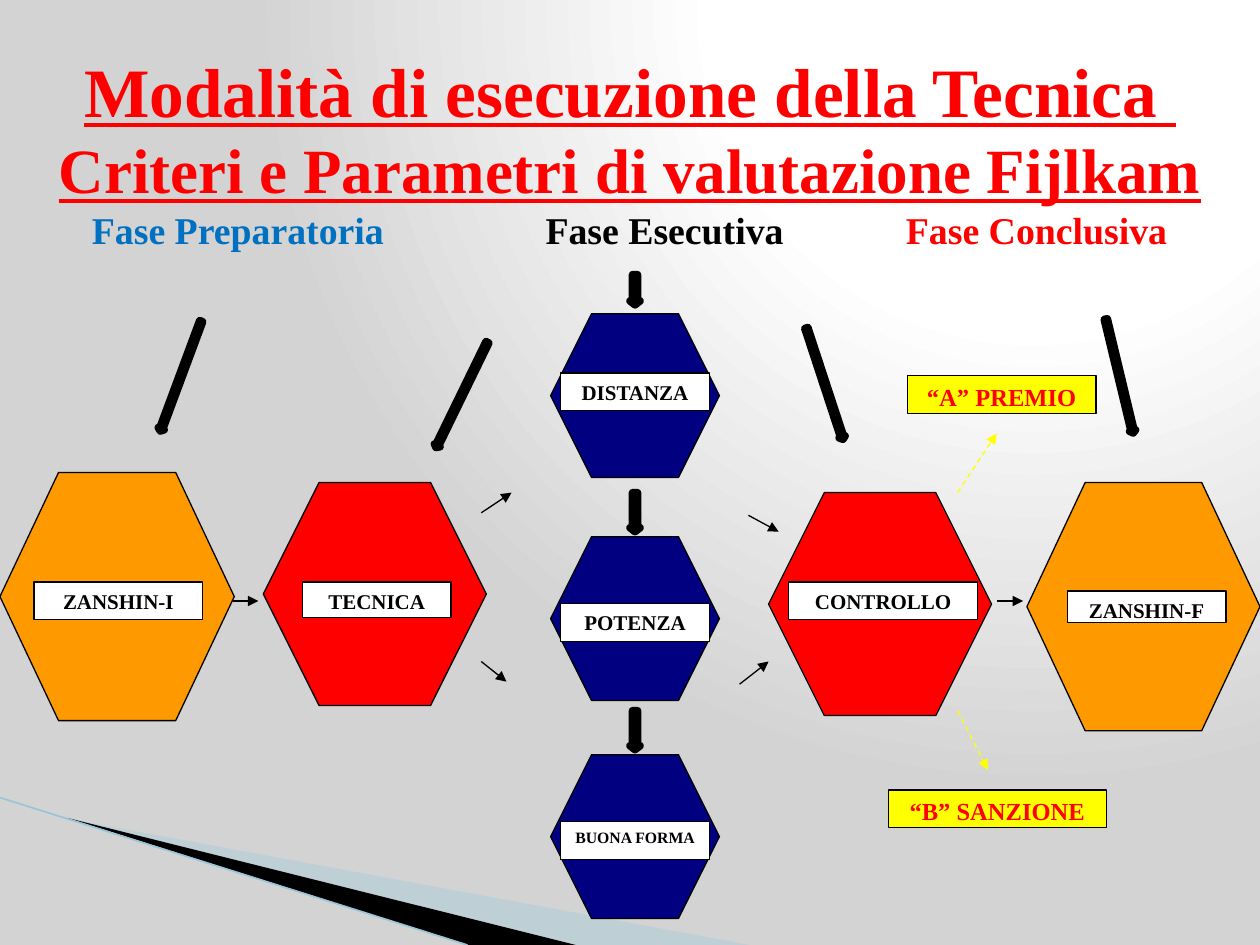
from pptx import Presentation, util as u
from pptx.dml.color import RGBColor
from pptx.enum import dml, shapes, text
from pptx.oxml import parse_xml
from pptx.oxml.ns import nsdecls, qn

PX = 9144  # 100 px to the inch
FONT = "Times New Roman"
BLACK, WHITE, RED, YELLOW = "000000", "FFFFFF", "FF0000", "FFFF00"
ORANGE, NAVY = "FF9900", "000080"
SHAPE = shapes.MSO_SHAPE


def px(*values):
    return [u.Emu(round(v * PX)) for v in values]


def rgb(code):
    return RGBColor.from_string(code)


def style_run(r, size, color, underline=False):
    r.font.name, r.font.size, r.font.bold = FONT, u.Pt(size), True
    r.font.color.rgb = rgb(color)
    r.font.underline = underline


def add_shape(s, kind, box, fill, line_width=0.75):
    sp = s.shapes.add_shape(kind, *px(*box))
    sp.shadow.inherit = False
    sp.fill.solid()
    sp.fill.fore_color.rgb = rgb(fill)
    sp.line.color.rgb = rgb(BLACK)
    sp.line.width = u.Pt(line_width)
    return sp


def add_label(s, box, words, size=12, fill=WHITE, color=BLACK):
    tf = add_shape(s, SHAPE.RECTANGLE, box, fill).text_frame
    tf.word_wrap = False
    tf.vertical_anchor = text.MSO_ANCHOR.TOP
    tf.text = words
    p = tf.paragraphs[0]
    p.alignment = text.PP_ALIGN.CENTER
    style_run(p.runs[0], size, color)


def add_step(s, box, fill, label, words, size=12):
    """Hexagon with a label whose place is relative to the hexagon's box."""
    add_shape(s, SHAPE.HEXAGON, box, fill).adjustments[0] = 0.25
    dx, dy, w, h = label
    add_label(s, (box[0] + dx, box[1] + dy, w, h), words, size)


def add_block_arrow(s, box, turn=0, fill=BLACK):
    sp = add_shape(s, SHAPE.DOWN_ARROW, box, fill, 4.33)
    sp.adjustments[1] = 0.387
    sp.rotation = turn


def add_line(s, ends, color=BLACK, width=0.75, head=True, dashed=False):
    c = s.shapes.add_connector(shapes.MSO_CONNECTOR.STRAIGHT, *px(*ends))
    c.line.color.rgb = rgb(color)
    c.line.width = u.Pt(width)
    if dashed:
        c.line.dash_style = dml.MSO_LINE.DASH
    if head:
        c.line._get_or_add_ln().append(
            parse_xml(f'<a:tailEnd {nsdecls("a")} type="triangle"/>'))
    c._element.spPr.append(parse_xml(f'<a:effectLst {nsdecls("a")}/>'))


def add_wedge(s, points, fill, alpha=100):
    fb = s.shapes.build_freeform(*points[0], scale=PX)
    fb.add_line_segments(points[1:], close=True)
    sp = fb.convert_to_shape()
    sp.shadow.inherit = False
    sp.fill.solid()
    sp.fill.fore_color.rgb = rgb(fill)
    sp.line.fill.background()
    if alpha < 100:
        sp._element.spPr.find(".//" + qn("a:srgbClr")).append(
            parse_xml(f'<a:alpha {nsdecls("a")} val="{alpha * 1000}"/>'))


def add_backdrop(s):
    s.background.fill.gradient()
    grad = s.element.find(".//" + qn("a:gradFill"))
    stops = "".join(
        f'<a:gs pos="{pos * 1000}"><a:srgbClr val="{color}"/></a:gs>'
        for pos, color in ((0, WHITE), (40, WHITE), (100, "D3D3D3")))
    grad.getparent().replace(grad, parse_xml(
        f'<a:gradFill {nsdecls("a")} rotWithShape="1"><a:gsLst>{stops}</a:gsLst>'
        '<a:path path="circle"><a:fillToRect l="65000" b="98000"/></a:path>'
        '</a:gradFill>'))
    add_wedge(s, [(55, 650), (595, 750), (456, 750)], "A0CBDC", 40)
    add_wedge(s, [(53, 649), (457, 750), (372, 750)], BLACK)
    add_line(s, (0, 633, 371, 750), "97C5D8", 0.95, head=False)


def add_heading(s, box):
    tf = s.shapes.add_textbox(*px(*box)).text_frame
    tf.word_wrap = True
    tf.margin_left = tf.margin_right = tf.margin_top = tf.margin_bottom = 0
    p = tf.paragraphs[0]
    p.text = ("Modalità di esecuzione della Tecnica \v"
              "Criteri e Parametri di valutazione Fijlkam")
    p.alignment = text.PP_ALIGN.CENTER
    for r, size in zip(p.runs, (39.6, 36)):
        style_run(r, size, RED, underline=True)

    p = tf.add_paragraph()
    p.alignment = text.PP_ALIGN.LEFT
    stops = "".join(f'<a:tab pos="{x * PX}" algn="l"/>' for x in (73, 433, 719))
    p._p.get_or_add_pPr().append(
        parse_xml(f'<a:tabLst {nsdecls("a")}>{stops}</a:tabLst>'))
    for phase, color in (("Preparatoria", "0070C0"), ("Esecutiva", BLACK),
                         ("Conclusiva", RED)):
        r = p.add_run()
        r.text = f"\tFase {phase}"
        style_run(r, 21.6, color)


def add_steps(s):
    add_step(s, (0, 375, 186, 197), ORANGE, (27, 87, 134, 30), "ZANSHIN-I")
    add_step(s, (209, 383, 177, 177), RED, (31, 79, 118, 28), "TECNICA")
    add_step(s, (610, 391, 177, 177), RED, (16, 71, 150, 30), "CONTROLLO")
    add_step(s, (815, 383, 185, 197), ORANGE, (32, 86, 126, 25), "ZANSHIN-F")
    for top, dy, words, size in ((249, 47, "DISTANZA", 12),
                                 (426, 53, "POTENZA", 12),
                                 (599, 53, "BUONA FORMA", 9)):
        add_step(s, (437, top, 134, 130), NAVY, (8, dy, 118, 30), words, size)


def add_arrows(s):
    for ends in ((382, 407, 406, 391), (382, 525, 402, 541),
                 (594, 409, 618, 422), (587, 543, 610, 525),
                 (185, 477, 205, 477), (791, 477, 812, 477)):
        add_line(s, ends)
    for left, top, turn, fill in ((141, 252, 20.4, "00CC66"),
                                  (364, 267, 26, BLACK),
                                  (652, 258, 341.8, BLACK),
                                  (886, 252, 346.5, YELLOW)):
        add_block_arrow(s, (left, top, 5, 93), turn, fill)
    for top, height in ((218, 24), (391, 31), (564, 31)):
        add_block_arrow(s, (500, top, 8, height))


def add_outcomes(s):
    for box, words, ends in (
            ((720, 298, 150, 30), "“A” PREMIO", (760, 391, 791, 344)),
            ((705, 627, 173, 30), "“B” SANZIONE", (760, 564, 784, 611))):
        add_label(s, box, words, 14, YELLOW, RED)
        add_line(s, ends, YELLOW, dashed=True)


def main():
    prs = Presentation()
    prs.slide_width, prs.slide_height = px(1000, 750)
    s = prs.slides.add_slide(prs.slide_layouts[6])
    add_backdrop(s)
    add_heading(s, (0, 38, 1000, 160))
    add_steps(s)
    add_arrows(s)
    add_outcomes(s)
    prs.save("out.pptx")


if __name__ == "__main__":
    main()
